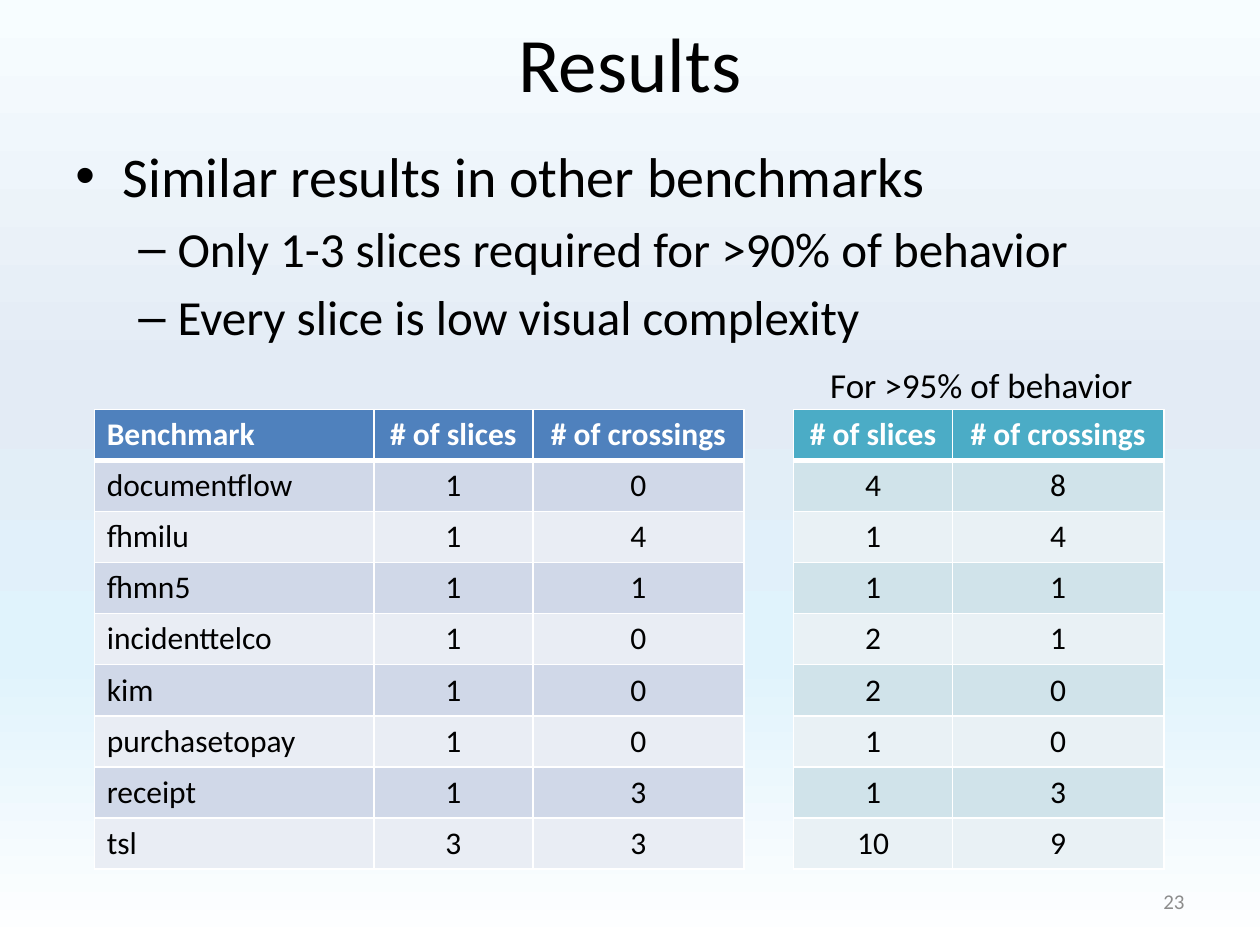
from dataclasses import dataclass

from lxml.etree import SubElement
from pptx import Presentation
from pptx.dml.color import RGBColor
from pptx.enum.text import MSO_ANCHOR, PP_ALIGN
from pptx.oxml import parse_xml
from pptx.oxml.ns import qn
from pptx.util import Cm, Pt


@dataclass(frozen=True)
class Theme:
    """Font, type sizes and colours of the slide."""

    font: str = "Calibri"
    title: int = 44
    levels: tuple = (32, 28)
    caption: int = 20
    cell: int = 18
    number: int = 12
    ink: str = "000000"
    paper: str = "FFFFFF"
    muted: str = "8C8C8C"
    blue: tuple = ("4F81BD", "D0D8E8", "E9EDF4")
    teal: tuple = ("4BACC6", "D0E3EA", "E9F1F5")
    backdrop: tuple = ((0, "F7FDFF"), (40, "E3EBF5"), (70, "E0F3FC"), (100, "FFFFFF"))


@dataclass(frozen=True)
class Box:
    """A rectangle in centimetres."""

    left: float
    top: float
    width: float
    height: float

    def lengths(self):
        """Return the four sides as slide lengths."""
        return Cm(self.left), Cm(self.top), Cm(self.width), Cm(self.height)


THEME = Theme()
DRAWING = "http://schemas.openxmlformats.org/drawingml/2006/main"
ROW_HEIGHT = 1.03
NAME_WIDTH, SLICES_WIDTH, CROSSINGS_WIDTH = 5.64, 3.2, 4.26
COUNT_HEADINGS = ("# of slices", "# of crossings")
BULLETS = (
    (0, "Similar results in other benchmarks"),
    (1, "Only 1-3 slices required for >90% of behavior"),
    (1, "Every slice is low visual complexity"),
)
BULLET_STYLES = (("•", 0.95, -0.95), ("–", 2.06, -0.79))
RESULTS_90 = (
    ("Benchmark", *COUNT_HEADINGS),
    ("documentflow", 1, 0),
    ("fhmilu", 1, 4),
    ("fhmn5", 1, 1),
    ("incidenttelco", 1, 0),
    ("kim", 1, 0),
    ("purchasetopay", 1, 0),
    ("receipt", 1, 3),
    ("tsl", 3, 3),
)
RESULTS_95 = (
    COUNT_HEADINGS, (4, 8), (1, 4), (1, 1), (2, 1), (2, 0), (1, 0), (1, 3), (10, 9),
)


def style_para(para, size, color=THEME.ink, align=PP_ALIGN.LEFT, bold=False):
    """Align a paragraph and format its runs."""
    para.alignment = align
    for span in para.runs:
        span.font.name = THEME.font
        span.font.size = Pt(size)
        span.font.bold = bold
        span.font.color.rgb = RGBColor.from_string(color)


def paint_background(page):
    """Fill the page with the vertical gradient."""
    fill = page.background.fill
    fill.gradient()
    fill.gradient_angle = 270
    stops = page.background._cSld.find(".//" + qn("a:gsLst"))
    for stop in list(stops):
        stops.remove(stop)
    for position, color in THEME.backdrop:
        stop = SubElement(stops, qn("a:gs"), pos=str(position * 1000))
        SubElement(stop, qn("a:srgbClr"), val=color)


def add_label(page, box, text, size, align, anchor=MSO_ANCHOR.MIDDLE, color=THEME.ink, wrap=True):
    """Place one line of text in a box."""
    frame = page.shapes.add_textbox(*box.lengths()).text_frame
    frame.word_wrap = wrap
    frame.vertical_anchor = anchor
    frame.text = text
    style_para(frame.paragraphs[0], size, color, align)


def add_bullets(page, box, items):
    """Place the two-level bullet list."""
    frame = page.shapes.add_textbox(*box.lengths()).text_frame
    frame.word_wrap = True
    frame.text = "\n".join(text for _, text in items)
    for para, (level, _) in zip(frame.paragraphs, items):
        mark, margin, indent = BULLET_STYLES[level]
        size = THEME.levels[level]
        style_para(para, size)
        para.level = level
        para.space_before = Pt(size * 0.2)
        properties = para._p.get_or_add_pPr()
        properties.set("marL", str(Cm(margin)))
        properties.set("indent", str(Cm(indent)))
        SubElement(properties, qn("a:buFont"), typeface="Arial")
        SubElement(properties, qn("a:buChar"), char=mark)


def set_borders(cell, bottom, top):
    """Draw the white rules around a cell, with widths in points."""
    properties = cell._tc.get_or_add_tcPr()
    sides = (("lnL", 1), ("lnR", 1), ("lnT", top), ("lnB", bottom))
    for index, (side, width) in enumerate(sides):
        line = parse_xml(
            f'<a:{side} xmlns:a="{DRAWING}" w="{Pt(width)}"><a:solidFill>'
            f'<a:srgbClr val="{THEME.paper}"/></a:solidFill></a:{side}>'
        )
        properties.insert(index, line)


def add_results_table(page, box, rows, widths, palette):
    """Place a banded table with a header, centring all but the names."""
    table = page.shapes.add_table(len(rows), len(widths), *box.lengths()).table
    for column, width in zip(table.columns, widths):
        column.width = Cm(width)
    header_fill, *bands = palette
    for row_index, values in enumerate(rows):
        table.rows[row_index].height = Cm(ROW_HEIGHT)
        header = row_index == 0
        fill = header_fill if header else bands[(row_index - 1) % 2]
        for column_index, value in enumerate(values):
            cell = table.cell(row_index, column_index)
            cell.text = str(value)
            cell.fill.solid()
            cell.fill.fore_color.rgb = RGBColor.from_string(fill)
            named = len(widths) == 3 and column_index == 0
            align = PP_ALIGN.LEFT if named else PP_ALIGN.CENTER
            color = THEME.paper if header else THEME.ink
            style_para(cell.text_frame.paragraphs[0], THEME.cell, color, align, header)
            set_borders(cell, 3 if header else 1, 3 if row_index == 1 else 1)


def add_results(page, box):
    """Place both result tables and the caption over the right one."""
    counts = (SLICES_WIDTH, CROSSINGS_WIDTH)
    right_width = sum(counts)
    right = box.left + box.width - right_width
    left_box = Box(box.left, box.top, NAME_WIDTH + right_width, box.height)
    right_box = Box(right, box.top, right_width, box.height)
    add_results_table(page, left_box, RESULTS_90, (NAME_WIDTH, *counts), THEME.blue)
    add_results_table(page, right_box, RESULTS_95, counts, THEME.teal)
    caption = Box(right + 0.46, box.top - 1.04, 6.65, 1.12)
    add_label(page, caption, "For >95% of behavior", THEME.caption, PP_ALIGN.CENTER,
              MSO_ANCHOR.TOP, wrap=False)


def main():
    """Build the deck and save it."""
    deck = Presentation()
    deck.slide_width, deck.slide_height = Cm(25.4), Cm(19.05)
    page = deck.slides.add_slide(deck.slide_layouts[6])
    paint_background(page)
    add_label(page, Box(1.27, 0.15, 22.86, 2.18), "Results", THEME.title, PP_ALIGN.CENTER)
    add_bullets(page, Box(1.27, 2.72, 22.86, 14.3), BULLETS)
    add_label(page, Box(18.2, 17.66, 5.93, 1.01), "23", THEME.number, PP_ALIGN.RIGHT,
              color=THEME.muted)
    add_results(page, Box(1.9, 8.25, 21.56, ROW_HEIGHT * len(RESULTS_90)))
    deck.save("out.pptx")


if __name__ == "__main__":
    main()
